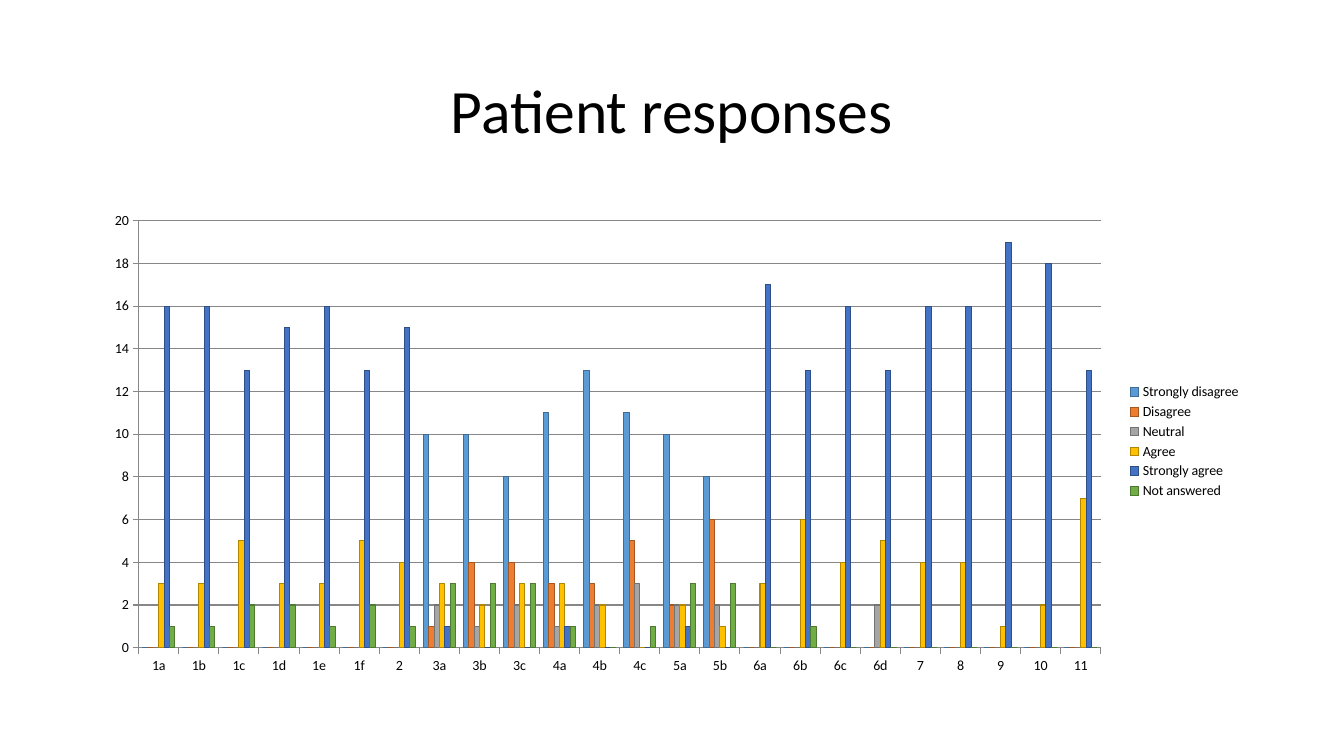
"""Build a slide with a clustered column chart of patient responses."""
from lxml.etree import SubElement
from pptx import Presentation
from pptx.chart.data import CategoryChartData
from pptx.dml.color import RGBColor
from pptx.enum.chart import XL_CHART_TYPE, XL_LEGEND_POSITION, XL_TICK_MARK
from pptx.enum.text import MSO_ANCHOR, PP_ALIGN
from pptx.oxml.ns import qn
from pptx.util import Pt

TITLE = "Patient responses"
QUESTIONS = ["1a", "1b", "1c", "1d", "1e", "1f", "2", "3a", "3b", "3c", "4a", "4b",
             "4c", "5a", "5b", "6a", "6b", "6c", "6d", "7", "8", "9", "10", "11"]
RESPONSES = {
    "Strongly disagree": [0, 0, 0, 0, 0, 0, 0, 10, 10, 8, 11, 13,
                          11, 10, 8, 0, 0, 0, 0, 0, 0, 0, 0, 0],
    "Disagree": [0, 0, 0, 0, 0, 0, 0, 1, 4, 4, 3, 3,
                 5, 2, 6, 0, 0, 0, 0, 0, 0, 0, 0, 0],
    "Neutral": [0, 0, 0, 0, 0, 0, 0, 2, 1, 2, 1, 2,
                3, 2, 2, 0, 0, 0, 2, 0, 0, 0, 0, 0],
    "Agree": [3, 3, 5, 3, 3, 5, 4, 3, 2, 3, 3, 2,
              0, 2, 1, 3, 6, 4, 5, 4, 4, 1, 2, 7],
    "Strongly agree": [16, 16, 13, 15, 16, 13, 15, 1, 0, 0, 1, 0,
                       0, 1, 0, 17, 13, 16, 13, 16, 16, 19, 18, 13],
    "Not answered": [1, 1, 2, 2, 1, 2, 1, 3, 3, 3, 1, 0,
                     1, 3, 3, 0, 1, 0, 0, 0, 0, 0, 0, 0],
}
THEME = {
    "font": "Calibri", "title": 44, "chart": 10, "text": "000000", "grid": "878787",
    "series": ["5B9BD5", "ED7D31", "A5A5A5", "FFC000", "4472C4", "70AD47"],
}
SLIDE = (960, 540)
MARGIN, WIDTH = 66, 828
TITLE_TOP, TITLE_HEIGHT = 28.8, 104.4
CHART_TOP, CHART_HEIGHT = 144, 342.7
PLOT = {"x": 0.04, "y": 0.04, "w": 0.83, "h": 0.89}


def color(name):
    return RGBColor.from_string(name)


def set_font(font, size):
    font.name, font.size = THEME["font"], Pt(size)
    font.color.rgb = color(THEME["text"])


def add_title(slide):
    box = slide.shapes.add_textbox(Pt(MARGIN), Pt(TITLE_TOP), Pt(WIDTH), Pt(TITLE_HEIGHT))
    tf = box.text_frame
    tf.word_wrap, tf.vertical_anchor = True, MSO_ANCHOR.MIDDLE
    p = tf.paragraphs[0]
    p.alignment, p.line_spacing = PP_ALIGN.CENTER, 0.9
    r = p.add_run()
    r.text = TITLE
    set_font(r.font, THEME["title"])


def place_plot(chart):
    area = chart.plots[0]._element.getparent()
    layout = area.find(qn("c:layout"))
    if layout is None:
        layout = SubElement(area, qn("c:layout"))
        area.insert(0, layout)
    manual = SubElement(layout, qn("c:manualLayout"))
    settings = {"layoutTarget": "inner", "xMode": "edge", "yMode": "edge", **PLOT}
    for tag, val in settings.items():
        SubElement(manual, qn(f"c:{tag}")).set("val", str(val))


def style_line(line, rgb):
    line.color.rgb, line.width = rgb, Pt(0.75)


def add_responses(slide):
    data = CategoryChartData()
    data.categories = QUESTIONS
    for name, values in RESPONSES.items():
        data.add_series(name, values)
    chart = slide.shapes.add_chart(
        XL_CHART_TYPE.COLUMN_CLUSTERED, Pt(MARGIN), Pt(CHART_TOP),
        Pt(WIDTH), Pt(CHART_HEIGHT), data).chart
    set_font(chart.font, THEME["chart"])
    chart.has_title = False
    chart.has_legend = True
    chart.legend.position = XL_LEGEND_POSITION.RIGHT
    chart.legend.include_in_layout = False
    grid = color(THEME["grid"])
    for axis in (chart.category_axis, chart.value_axis):
        axis.major_tick_mark = XL_TICK_MARK.OUTSIDE
        axis.minor_tick_mark = XL_TICK_MARK.NONE
        style_line(axis.format.line, grid)
    axis = chart.value_axis
    axis.minimum_scale, axis.maximum_scale, axis.major_unit = 0, 20, 2
    axis.has_major_gridlines = True
    style_line(axis.major_gridlines.format.line, grid)
    plot = chart.plots[0]
    plot.gap_width, plot.overlap, plot.vary_by_categories = 150, 0, False
    for series, name in zip(plot.series, THEME["series"]):
        fmt = series.format
        fmt.fill.solid()
        fmt.fill.fore_color.rgb = color(name)
        style_line(fmt.line, RGBColor(*(int(c * 0.7) for c in color(name))))
    place_plot(chart)


def main():
    prs = Presentation()
    prs.slide_width, prs.slide_height = map(Pt, SLIDE)
    slide = prs.slides.add_slide(prs.slide_layouts[6])
    add_title(slide)
    add_responses(slide)
    prs.save("out.pptx")


if __name__ == "__main__":
    main()
